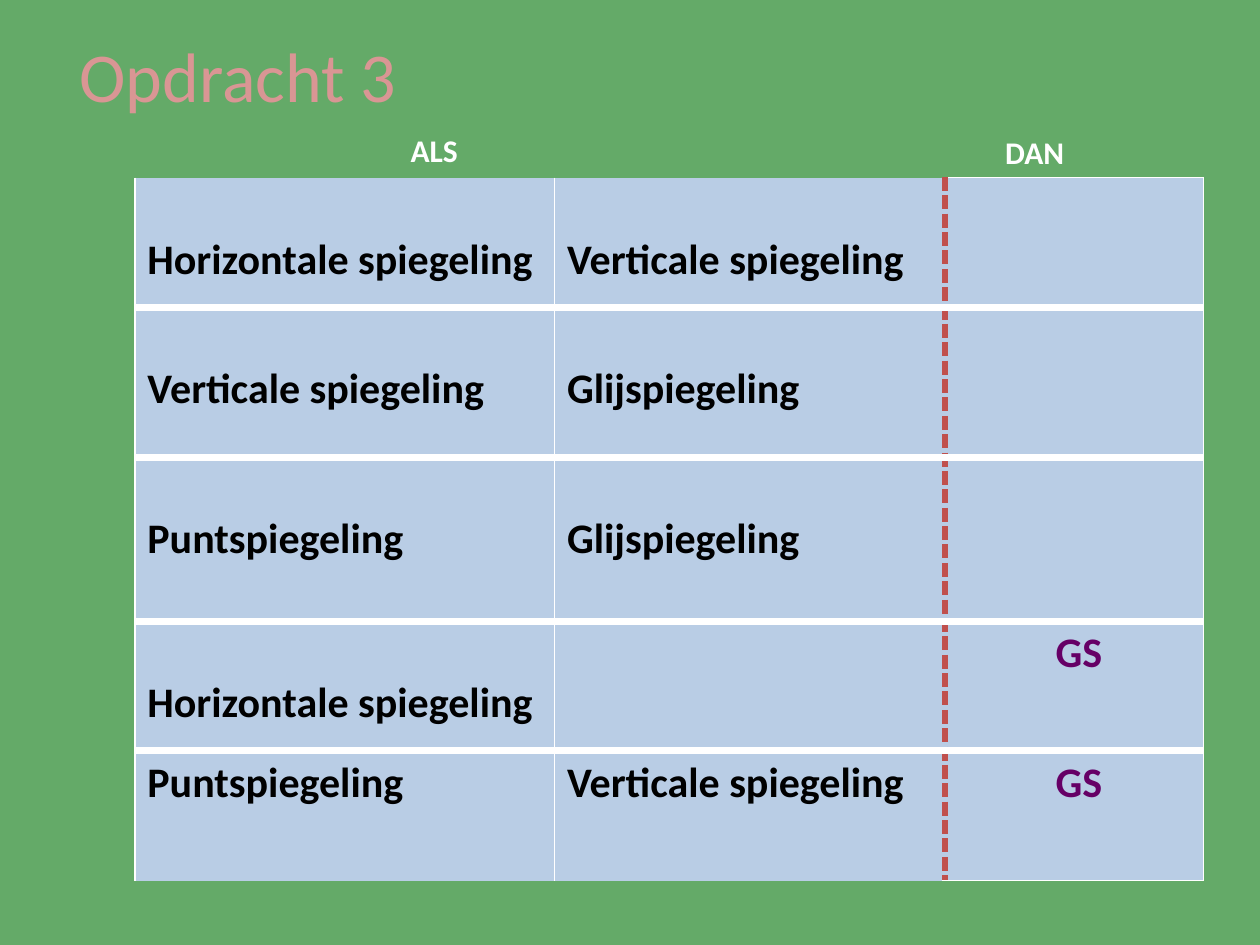
from lxml import etree
from pptx import Presentation
from pptx.dml.color import RGBColor
from pptx.enum.text import MSO_ANCHOR, MSO_AUTO_SIZE, PP_ALIGN
from pptx.oxml.ns import qn
from pptx.util import Inches, Pt

LEFT, CENTER = PP_ALIGN.LEFT, PP_ALIGN.CENTER
TOP = MSO_ANCHOR.TOP
FIT, NO_FIT = MSO_AUTO_SIZE.SHAPE_TO_FIT_TEXT, MSO_AUTO_SIZE.NONE

GREEN = RGBColor(0x64, 0xAA, 0x68)
PINK = RGBColor(0xD9, 0x96, 0x94)
BLUE = RGBColor(0xB9, 0xCD, 0xE5)
RED = RGBColor(0xC0, 0x50, 0x4D)
PURPLE = RGBColor(0x66, 0x00, 0x66)
WHITE = RGBColor(0xFF, 0xFF, 0xFF)
BLACK = RGBColor(0x00, 0x00, 0x00)

THIN = (WHITE, 1, "solid")
THICK = (WHITE, 4.5, "solid")
DASHED = (RED, 4.5, "sysDash")

COLS = [3.33, 3.1, 2.05]
HEIGHTS = [1.03, 1.19, 1.3, 1.03, 1.03]
ROWS = [
    ("Horizontale spiegeling", "Verticale spiegeling", ""),
    ("Verticale spiegeling", "Glijspiegeling", ""),
    ("Puntspiegeling", "Glijspiegeling", ""),
    ("Horizontale spiegeling", "", " GS"),
    ("Puntspiegeling", "Verticale spiegeling", " GS"),
]


def write(frame, text, size=24, color=BLACK, bold=True, align=LEFT):
    para = frame.paragraphs[0]
    para.alignment = align
    run = para.add_run()
    run.text = text
    font = run.font
    font.name, font.size, font.bold = "Calibri", Pt(size), bold
    font.color.rgb = color


def add_border(cell, side, line):
    """Draw one side (L, R, T or B); a line of None leaves it bare."""
    props = cell._tc.get_or_add_tcPr()
    edge = etree.SubElement(props, qn("a:ln" + side))
    if line is None:
        edge.set("w", "0")
        etree.SubElement(edge, qn("a:noFill"))
        return
    color, width, dash = line
    edge.set("w", str(Pt(width)))
    fill = etree.SubElement(edge, qn("a:solidFill"))
    etree.SubElement(fill, qn("a:srgbClr"), val=str(color))
    etree.SubElement(edge, qn("a:prstDash"), val=dash)


def add_title(slide, text, box):
    title = slide.shapes.title
    title.left, title.top, title.width, title.height = map(Inches, box)
    frame = title.text_frame
    frame.word_wrap = False
    frame.auto_size = NO_FIT
    frame.vertical_anchor = TOP
    write(frame, text, size=40, color=PINK, bold=False)


def add_label(slide, text, box):
    frame = slide.shapes.add_textbox(*map(Inches, box)).text_frame
    frame.word_wrap = False
    frame.auto_size = FIT
    write(frame, text, size=18, color=WHITE)


def add_grid(slide, box):
    table = slide.shapes.add_table(len(ROWS), len(COLS), *map(Inches, box)).table
    table.first_row = table.horz_banding = False
    for col, width in zip(table.columns, COLS):
        col.width = Inches(width)
    for row, height in zip(table.rows, HEIGHTS):
        row.height = Inches(height)

    last_row, last_col = len(ROWS) - 1, len(COLS) - 1
    for r, texts in enumerate(ROWS):
        for c, text in enumerate(texts):
            cell = table.cell(r, c)
            answer = c == last_col
            outer = THIN if answer else None
            add_border(cell, "L", DASHED if answer else THIN)
            add_border(cell, "R", DASHED if c == last_col - 1 else THIN)
            add_border(cell, "T", THICK if r else outer)
            add_border(cell, "B", THICK if r < last_row else outer)
            cell.fill.solid()
            cell.fill.fore_color.rgb = BLUE
            if not text:
                continue
            if answer:
                write(cell.text_frame, text, color=PURPLE, align=CENTER)
            else:
                # Every row but the last starts one line lower
                cell.margin_top = Inches(0.45 if r < last_row else 0.05)
                write(cell.text_frame, text)


def main():
    deck = Presentation()
    deck.slide_width, deck.slide_height = Inches(10), Inches(7.5)
    slide = deck.slides.add_slide(deck.slide_layouts[5])
    slide.background.fill.solid()
    slide.background.fill.fore_color.rgb = GREEN
    add_grid(slide, (1.07, 1.41, sum(COLS), sum(HEIGHTS)))
    add_label(slide, "ALS", (3.16, 0.99, 0.58, 0.4))
    add_label(slide, "DAN", (7.88, 1.01, 0.67, 0.4))
    add_title(slide, "Opdracht 3", (0.53, 0.21, 2.74, 0.77))
    deck.save("out.pptx")


if __name__ == "__main__":
    main()
